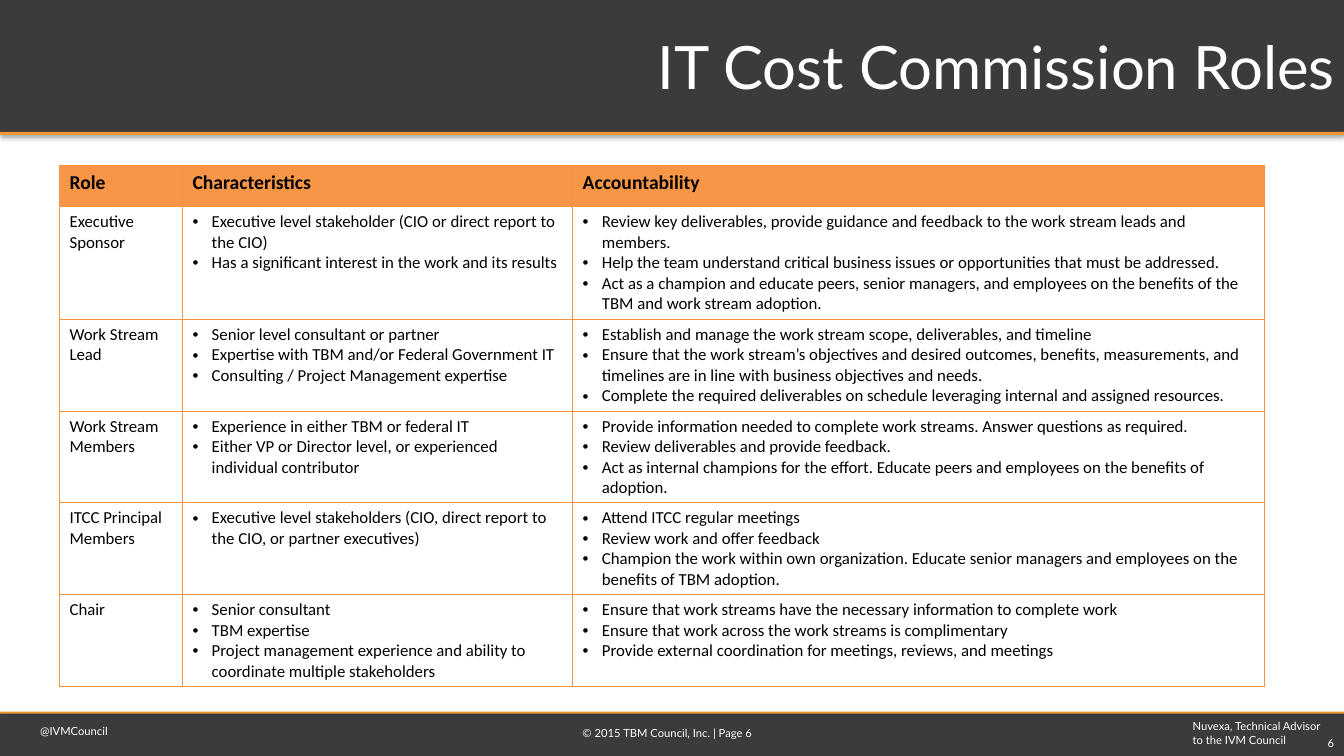
"""Build the IT Cost Commission Roles slide."""
from dataclasses import dataclass

from lxml import etree
from pptx import Presentation
from pptx.dml.color import RGBColor
from pptx.enum.shapes import MSO_SHAPE
from pptx.enum.text import MSO_ANCHOR, PP_ALIGN
from pptx.oxml import parse_xml
from pptx.oxml.ns import nsdecls, qn
from pptx.util import Inches, Pt

RECT = MSO_SHAPE.RECTANGLE
TOP, MIDDLE = MSO_ANCHOR.TOP, MSO_ANCHOR.MIDDLE
LEFT, CENTER, RIGHT = PP_ALIGN.LEFT, PP_ALIGN.CENTER, PP_ALIGN.RIGHT

COLORS = {"dark": "3B3B3B", "accent": "F79837", "header": "F79646",
          "border": "F69240", "white": "FFFFFF", "black": "000000"}
SLIDE_W, SLIDE_H = 13.33, 7.5
BULLET_INDENT = 0.19


@dataclass(frozen=True)
class Bar:
    top: float
    height: float
    color: str


@dataclass(frozen=True)
class Label:
    lines: list[str]
    left: float
    top: float
    width: float
    height: float
    align: PP_ALIGN = LEFT
    size: float = 8
    anchor: MSO_ANCHOR = TOP


@dataclass(frozen=True)
class Role:
    name: str
    height: float
    characteristics: list[str]
    accountability: list[str]


BARS = [
    Bar(0, 1.31, "dark"),
    Bar(1.31, 0.03, "accent"),
    Bar(7.06, 0.03, "accent"),
    Bar(7.08, 0.42, "dark"),
]

LABELS = [
    Label(["@IVMCouncil"], 0.3, 7.14, 1.56, 0.24),
    Label(["Nuvexa, Technical Advisor", "to the IVM Council"], 11.73, 7.09, 1.54, 0.37),
    Label(["© 2015 TBM Council, Inc. | Page 6"], 4.35, 7.16, 4.54, 0.24, CENTER),
    Label(["6"], 12.33, 7.26, 1, 0.24, RIGHT),
    Label(["IT Cost Commission Roles"], 3.02, 0.14, 10.32, 1.02, RIGHT, 42.7, MIDDLE),
]

TABLE_LEFT, TABLE_TOP = 0.59, 1.64
COL_WIDTHS = [1.22, 3.87, 6.86]
HEADER_HEIGHT = 0.41
HEADERS = ["Role", "Characteristics", "Accountability"]

ROLES = [
    Role("Executive Sponsor", 1.12,
         ["Executive level stakeholder (CIO or direct report to the CIO)",
          "Has a significant interest in the work and its results"],
         ["Review key deliverables, provide guidance and feedback to the work stream "
          "leads and members.",
          "Help the team understand critical business issues or opportunities that must "
          "be addressed.",
          "Act as a champion and educate peers, senior managers, and employees on the "
          "benefits of the TBM and work stream adoption."]),
    Role("Work Stream Lead", 0.91,
         ["Senior level consultant or partner",
          "Expertise with TBM and/or Federal Government IT",
          "Consulting / Project Management expertise"],
         ["Establish and manage the work stream scope, deliverables, and timeline",
          "Ensure that the work stream’s objectives and desired outcomes, benefits, "
          "measurements, and timelines are in line with business objectives and needs.",
          "Complete the required deliverables on schedule leveraging internal and "
          "assigned resources."]),
    Role("Work Stream Members", 0.91,
         ["Experience in either TBM or federal IT",
          "Either VP or Director level, or experienced individual contributor"],
         ["Provide information needed to complete work streams. Answer questions as "
          "required.",
          "Review deliverables and provide feedback.",
          "Act as internal champions for the effort. Educate peers and employees on the "
          "benefits of adoption."]),
    Role("ITCC Principal Members", 0.91,
         ["Executive level stakeholders (CIO, direct report to the CIO, or partner "
          "executives)"],
         ["Attend ITCC regular meetings",
          "Review work and offer feedback",
          "Champion the work within own organization. Educate senior managers and "
          "employees on the benefits of TBM adoption."]),
    Role("Chair", 0.91,
         ["Senior consultant",
          "TBM expertise",
          "Project management experience and ability to coordinate multiple stakeholders"],
         ["Ensure that work streams have the necessary information to complete work",
          "Ensure that work across the work streams is complimentary",
          "Provide external coordination for meetings, reviews, and meetings"]),
]


def rgb(name: str) -> RGBColor:
    return RGBColor.from_string(COLORS[name])


def write(tf, lines: list[str], *, size: float, font: str, color: str,
          align: PP_ALIGN = LEFT, bold: bool = False, bullet: bool = False) -> None:
    for i, line in enumerate(lines):
        p = tf.add_paragraph() if i else tf.paragraphs[0]
        p.alignment = align
        if bullet:
            pPr = p._p.get_or_add_pPr()
            pPr.set("marL", str(Inches(BULLET_INDENT)))
            pPr.set("indent", str(-Inches(BULLET_INDENT)))
            etree.SubElement(pPr, qn("a:buFont"), typeface="Arial")
            etree.SubElement(pPr, qn("a:buChar"), char="•")
        r = p.add_run()
        r.text = line
        r.font.size = Pt(size)
        r.font.name = font
        r.font.bold = bold
        r.font.color.rgb = rgb(color)


def add_bar(s, bar: Bar) -> None:
    sp = s.shapes.add_shape(RECT, 0, Inches(bar.top), Inches(SLIDE_W), Inches(bar.height))
    sp.fill.solid()
    sp.fill.fore_color.rgb = rgb(bar.color)
    sp.line.fill.background()
    sp.shadow.inherit = False
    sp._element.spPr.find(qn("a:effectLst")).append(parse_xml(
        f'<a:outerShdw {nsdecls("a")} blurRad="{Pt(3.1)}" dist="{Pt(1.8)}" dir="5400000" '
        f'rotWithShape="0"><a:srgbClr val="{COLORS["black"]}"><a:alpha val="35000"/>'
        '</a:srgbClr></a:outerShdw>'))


def add_label(s, label: Label) -> None:
    sp = s.shapes.add_textbox(Inches(label.left), Inches(label.top),
                              Inches(label.width), Inches(label.height))
    tf = sp.text_frame
    tf.word_wrap = True
    tf.vertical_anchor = label.anchor
    write(tf, label.lines, size=label.size, font="Lato", color="white", align=label.align)


def style_cell(cell, fill: str | None) -> None:
    tcPr = cell._tc.get_or_add_tcPr()
    for side in ("lnL", "lnR", "lnT", "lnB"):
        tcPr.append(parse_xml(
            f'<a:{side} {nsdecls("a")} w="{Pt(0.75)}"><a:solidFill>'
            f'<a:srgbClr val="{COLORS["border"]}"/></a:solidFill></a:{side}>'))
    if fill:
        cell.fill.solid()
        cell.fill.fore_color.rgb = rgb(fill)
    else:
        cell.fill.background()


def add_roles_table(s) -> None:
    heights = [HEADER_HEIGHT] + [role.height for role in ROLES]
    table = s.shapes.add_table(len(heights), len(COL_WIDTHS), Inches(TABLE_LEFT),
                               Inches(TABLE_TOP), Inches(sum(COL_WIDTHS)),
                               Inches(sum(heights))).table
    table.horz_banding = False
    for col, width in zip(table.columns, COL_WIDTHS):
        col.width = Inches(width)
    for row, height in zip(table.rows, heights):
        row.height = Inches(height)
    for c, header in enumerate(HEADERS):
        cell = table.cell(0, c)
        style_cell(cell, "header")
        write(cell.text_frame, [header], size=14, font="Calibri", color="black", bold=True)
    for r, role in enumerate(ROLES, 1):
        for c, lines in enumerate([[role.name], role.characteristics, role.accountability]):
            cell = table.cell(r, c)
            style_cell(cell, None)
            write(cell.text_frame, lines, size=12, font="Calibri", color="black", bullet=c > 0)


def main() -> None:
    prs = Presentation()
    prs.slide_width, prs.slide_height = Inches(SLIDE_W), Inches(SLIDE_H)
    s = prs.slides.add_slide(prs.slide_layouts[6])
    for bar in BARS:
        add_bar(s, bar)
    for label in LABELS:
        add_label(s, label)
    add_roles_table(s)
    prs.save("out.pptx")


if __name__ == "__main__":
    main()
